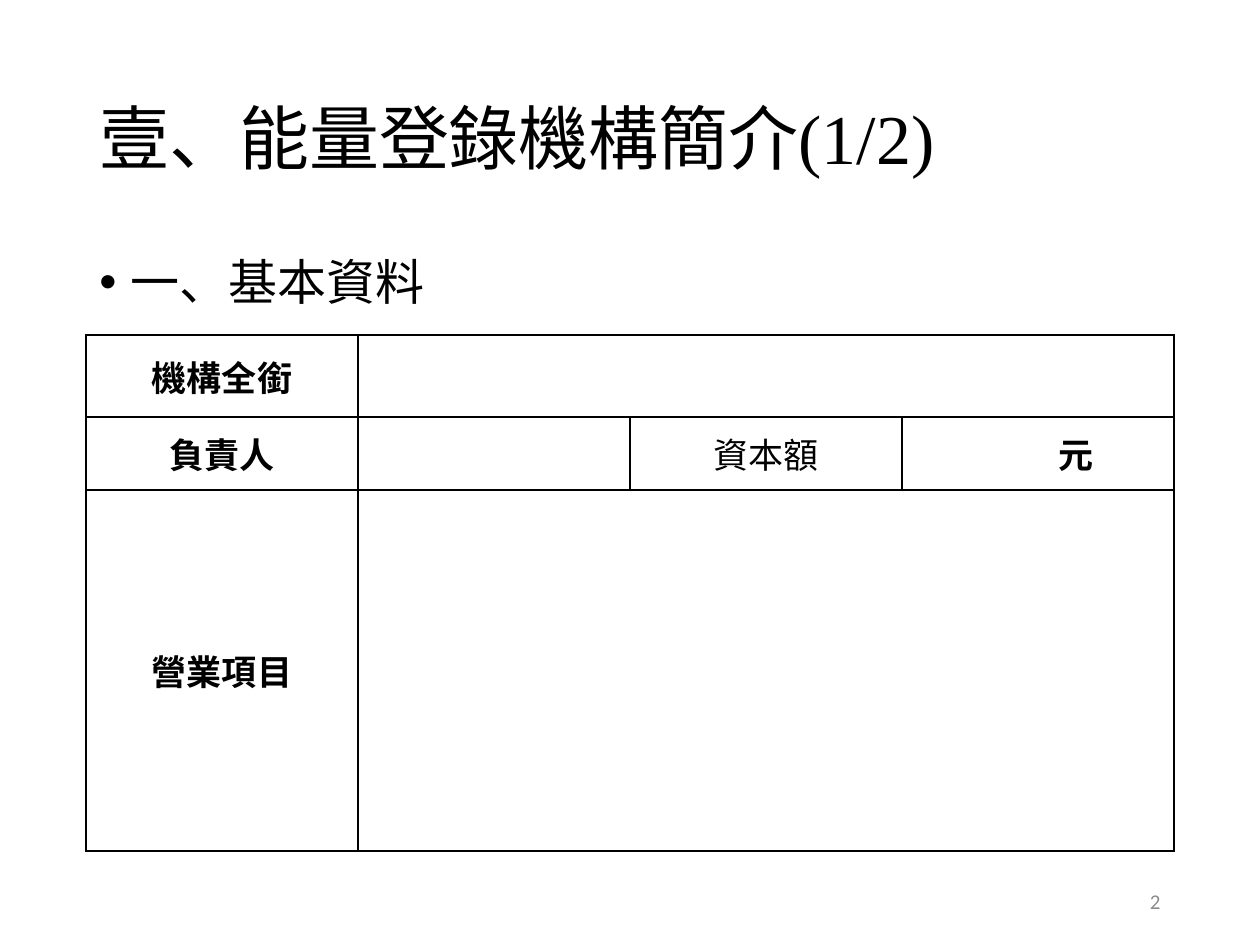
from pptx import Presentation
from pptx.util import Pt
from pptx.dml.color import RGBColor as RGB
from pptx.enum.text import PP_ALIGN as AL, MSO_ANCHOR as AN
from pptx.oxml import parse_xml
from pptx.oxml.ns import nsdecls

PX = 914400 // 126
HUE = {"ink": "000000", "gray": "8C8C8C"}

deck = Presentation()
deck.slide_width, deck.slide_height = 1260 * PX, 945 * PX
page = deck.slides.add_slide(deck.slide_layouts[6])


def write(frame, text, size=20, font="Times New Roman", hue="ink",
          bold=False, align=AL.LEFT, space=None):
    para = frame.paragraphs[0]
    para.alignment = align
    para.line_spacing = space
    run = para.add_run()
    run.text = text
    run.font.size = Pt(size)
    run.font.name = font
    run.font.bold = bold
    run.font.color.rgb = RGB.from_string(HUE[hue])
    return para


def add_box(left, top, width, height, anchor):
    box = page.shapes.add_textbox(left * PX, top * PX, width * PX, height * PX)
    frame = box.text_frame
    frame.word_wrap = True
    frame.vertical_anchor = anchor
    return frame


# Title
write(add_box(87, 50, 1086, 183, AN.MIDDLE), "壹、能量登錄機構簡介(1/2)",
      size=40, space=0.9)

# Bulleted heading
para = write(add_box(87, 252, 1086, 600, AN.TOP), "一、基本資料",
             size=28, space=0.9)
para.space_before = Pt(10)
props = para._p.get_or_add_pPr()
props.set("marL", "228600")
props.set("indent", "-228600")
for tag in ('<a:buFont %s typeface="Arial"/>', '<a:buChar %s char="•"/>'):
    props.append(parse_xml(tag % nsdecls("a")))

# Table grid
rows, cols = [82, 73, 361], [272] * 4
grid = page.shapes.add_table(len(rows), len(cols), 86 * PX, 335 * PX,
                             sum(cols) * PX, sum(rows) * PX).table
grid.first_row = grid.horz_banding = False
for row, high in zip(grid.rows, rows):
    row.height = high * PX
for col, wide in zip(grid.columns, cols):
    col.width = wide * PX

# Cell fills, margins and borders
for cell in grid.iter_cells():
    cell.vertical_anchor = AN.MIDDLE
    cell.margin_left = cell.margin_right = 9 * PX
    cell.margin_top = cell.margin_bottom = 0
    props = cell._tc.get_or_add_tcPr()
    for side in ("lnL", "lnR", "lnT", "lnB"):
        props.append(parse_xml(
            f'<a:{side} {nsdecls("a")} w="12700"><a:solidFill>'
            f'<a:srgbClr val="{HUE["ink"]}"/></a:solidFill></a:{side}>'))
    cell.fill.background()
for row in (0, 2):
    grid.cell(row, 1).merge(grid.cell(row, 3))

# Cell labels
labels = [
    (0, 0, "機構全銜", True, AL.CENTER),
    (1, 0, "負責人", True, AL.CENTER),
    (1, 2, "資本額", False, AL.CENTER),
    (1, 3, "元", True, AL.RIGHT),
    (2, 0, "營業項目", True, AL.CENTER),
]
for row, col, text, bold, align in labels:
    write(grid.cell(row, col).text_frame, text, bold=bold, align=align)
grid.cell(1, 3).margin_right = 80 * PX

# Page number
write(add_box(890, 876, 283, 50, AN.MIDDLE), "2", size=12, font="Calibri",
      hue="gray", align=AL.RIGHT)

deck.save("out.pptx")
